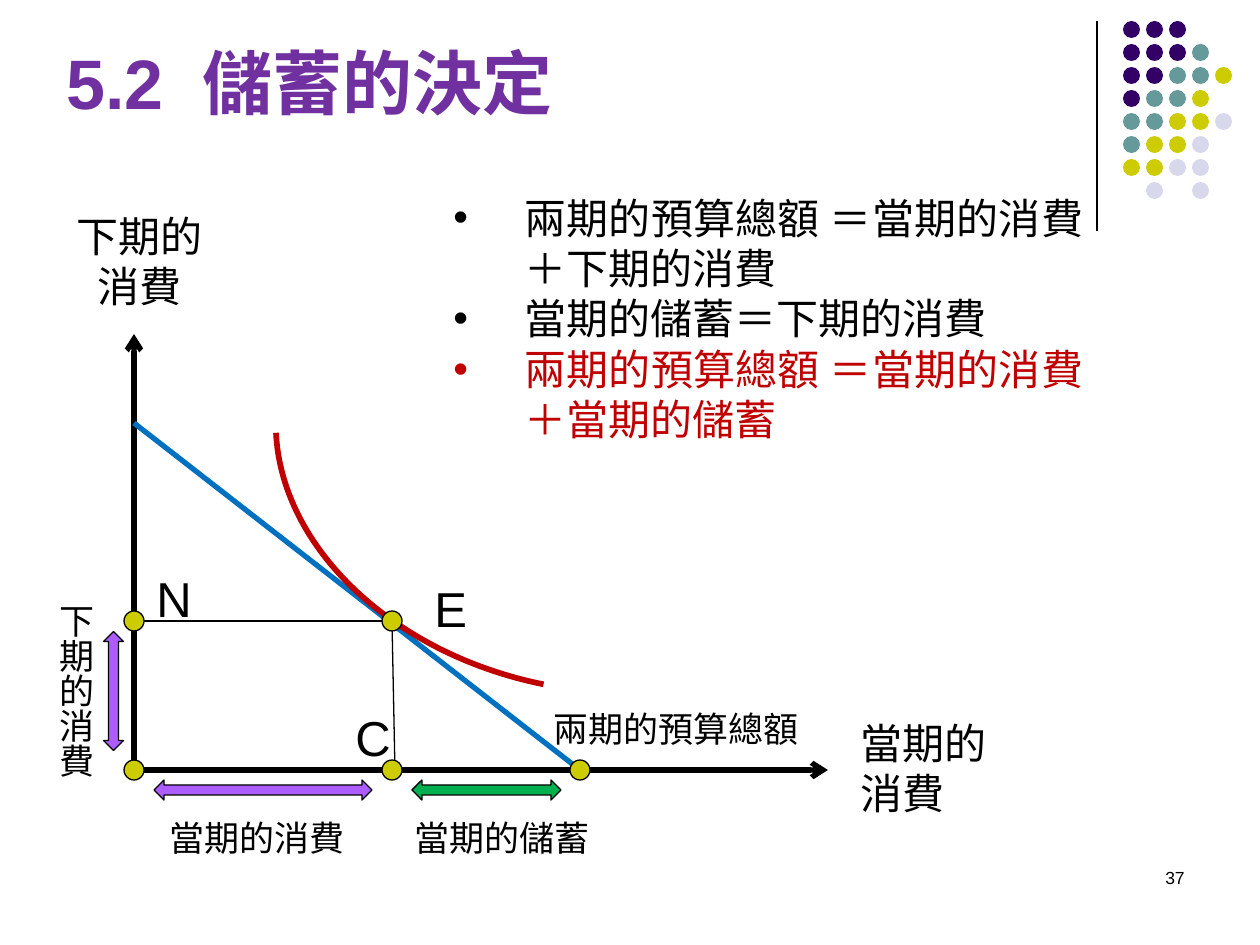
from lxml.etree import SubElement
from pptx import Presentation
from pptx.dml.color import RGBColor
from pptx.enum.shapes import MSO_CONNECTOR as LINK, MSO_SHAPE as SHAPE
from pptx.enum.text import MSO_ANCHOR as ANCHOR, PP_ALIGN as ALIGN
from pptx.oxml.ns import qn
from pptx.util import Emu, Pt

SCALE = 914400 / 126
CJK, LATIN = "Noto Sans CJK TC", "Arial"
BLACK, RED, PURPLE, OLIVE = "000000", "C00000", "AD5CFF", "CCCC00"
DOT_COLOURS = {"p": "330066", "t": "669999", "y": OLIVE, "l": "D8D8EC"}
DOT_ROWS = ["ppp", "pppt", "pptty", "ptty", "ttyyl", "tyyl", "yyll", " l l"]
DOT_SIZE, DOT_PITCH = 17, 23
ORIGIN_X, CURRENT_X, BUDGET_X = 134, 392, 580
AXIS_Y, CHOICE_Y = 770, 621
POINT_SIZE = 20
BULLET_INDENT = 71


def px(length):
    """Turn pixels into EMU."""
    return Emu(round(length * SCALE))


def colour(code):
    """Turn a hex string into a colour."""
    return RGBColor.from_string(code)


def style_text(frame, size, font, code=BLACK, align=None, bold=False):
    """Format every paragraph and run of a text frame."""
    for para in frame.paragraphs:
        para.alignment = align
        for span in para.runs:
            span.font.size = Pt(size)
            span.font.name = font
            span.font.bold = bold
            span.font.color.rgb = colour(code)
            SubElement(span.font._element, qn("a:ea"), typeface=CJK)


def add_title(page, text):
    """Place and format the title placeholder."""
    title = page.shapes.title
    title.left, title.top, title.width, title.height = map(px, (54, 29, 1036, 105))
    frame = title.text_frame
    frame.text = text
    frame.vertical_anchor = ANCHOR.MIDDLE
    style_text(frame, 40, LATIN, "7030A0", ALIGN.LEFT, True)


def add_label(page, text, bounds, size, font=CJK, align=ALIGN.LEFT, wrap=False):
    """Add a text box and return its frame."""
    frame = page.shapes.add_textbox(*map(px, bounds)).text_frame
    frame.word_wrap = wrap
    frame.text = text
    style_text(frame, size, font, align=align)
    return frame


def add_bullets(page, items, bounds):
    """Add a justified bullet list whose last item is red."""
    frame = add_label(page, "\n".join(items), bounds, 24, align=ALIGN.JUSTIFY, wrap=True)
    for para in frame.paragraphs:
        props = para._p.get_or_add_pPr()
        props.set("marL", str(px(BULLET_INDENT)))
        props.set("indent", str(-px(BULLET_INDENT)))
        SubElement(props, qn("a:buFont"), typeface=LATIN)
        SubElement(props, qn("a:buChar"), char="•")
    frame.paragraphs[-1].runs[0].font.color.rgb = colour(RED)


def add_line(page, start, end, code=BLACK, weight=0.75, arrow=False):
    """Add a straight line, with an arrowhead at its end if asked."""
    line = page.shapes.add_connector(LINK.STRAIGHT, *map(px, start + end))
    line.line.color.rgb = colour(code)
    line.line.width = Pt(weight)
    if arrow:
        SubElement(line.line._get_or_add_ln(), qn("a:tailEnd"), type="arrow")
    SubElement(line._element.spPr, qn("a:effectLst"))


def add_figure(page, kind, bounds, fill=None, edge=None, weight=0.75, turn=0):
    """Add a preset shape with an optional fill and outline."""
    figure = page.shapes.add_shape(kind, *map(px, bounds))
    figure.shadow.inherit = False
    figure.rotation = turn
    if fill:
        figure.fill.solid()
        figure.fill.fore_color.rgb = colour(fill)
    else:
        figure.fill.background()
    if edge:
        figure.line.color.rgb = colour(edge)
        figure.line.width = Pt(weight)
    else:
        figure.line.fill.background()
    return figure


def add_decoration(page):
    """Add the corner rule and its grid of dots."""
    add_line(page, (1097, 21), (1097, 231))
    for row, keys in enumerate(DOT_ROWS):
        for column, key in enumerate(keys):
            if key in DOT_COLOURS:
                spot = (1123 + column * DOT_PITCH, 21 + row * DOT_PITCH, DOT_SIZE, DOT_SIZE)
                add_figure(page, SHAPE.OVAL, spot, DOT_COLOURS[key])


def add_diagram(page):
    """Add the axes, budget line, indifference curve, points and spans."""
    add_line(page, (ORIGIN_X, AXIS_Y), (828, AXIS_Y), weight=3, arrow=True)
    add_line(page, (ORIGIN_X, AXIS_Y), (ORIGIN_X, 334), weight=3, arrow=True)
    add_line(page, (ORIGIN_X, 423), (BUDGET_X, AXIS_Y), "0070C0", 3)
    add_line(page, (ORIGIN_X, CHOICE_Y), (CURRENT_X, CHOICE_Y))
    add_line(page, (CURRENT_X, CHOICE_Y), (395, AXIS_Y))
    curve = add_figure(page, SHAPE.ARC, (273, 213, 635, 476), None, RED, 3.25, 191.4)
    curve.adjustments[0], curve.adjustments[1] = 162, 211.15
    points = [(BUDGET_X, AXIS_Y), (CURRENT_X, CHOICE_Y), (CURRENT_X, AXIS_Y),
              (ORIGIN_X, AXIS_Y), (ORIGIN_X, CHOICE_Y)]
    for x, y in points:
        corner = (x - POINT_SIZE // 2, y - POINT_SIZE // 2)
        add_figure(page, SHAPE.OVAL, corner + (POINT_SIZE, POINT_SIZE), OLIVE, BLACK)
    spans = [((412, 780, 149, 20), "00B050", 0), ((154, 780, 218, 20), PURPLE, 0),
             ((54, 681, 119, 20), PURPLE, 270)]
    for bounds, fill, turn in spans:
        add_figure(page, SHAPE.LEFT_RIGHT_ARROW, bounds, fill, BLACK, turn=turn)


def add_diagram_labels(page):
    """Name the axes, points and spans of the diagram."""
    add_label(page, "當期的\n消費", (848, 711, 152, 115), 24)
    add_label(page, "下期的\n消費", (64, 204, 152, 115), 24, align=ALIGN.CENTER)
    for letter, left, top in [("E", 422, 572), ("N", 144, 562), ("C", 343, 701)]:
        add_label(page, letter, (left, top, 47, 50), 28, LATIN)
    add_label(page, "兩期的預算總額", (541, 701, 277, 55), 20, wrap=True)
    add_label(page, "當期的消費", (156, 810, 202, 55), 20, align=ALIGN.CENTER)
    add_label(page, "當期的儲蓄", (402, 810, 202, 55), 20)
    upright = add_label(page, "下期的消費", (35, 591, 68, 189), 20, align=ALIGN.CENTER)
    upright._txBody.bodyPr.set("vert", "eaVert")


def main():
    """Build and save the slide."""
    deck = Presentation()
    deck.slide_width, deck.slide_height = px(1260), px(945)
    page = deck.slides.add_slide(deck.slide_layouts[5])
    add_decoration(page)
    add_title(page, "5.2  儲蓄的決定")
    add_diagram(page)
    add_diagram_labels(page)
    add_bullets(page, ["兩期的預算總額 ＝當期的消費 ＋下期的消費", "當期的儲蓄＝下期的消費",
                       "兩期的預算總額 ＝當期的消費 ＋當期的儲蓄"], (441, 186, 655, 267))
    add_label(page, "37", (903, 861, 294, 63), 10, LATIN, ALIGN.RIGHT, True)
    deck.save("out.pptx")


if __name__ == "__main__":
    main()
